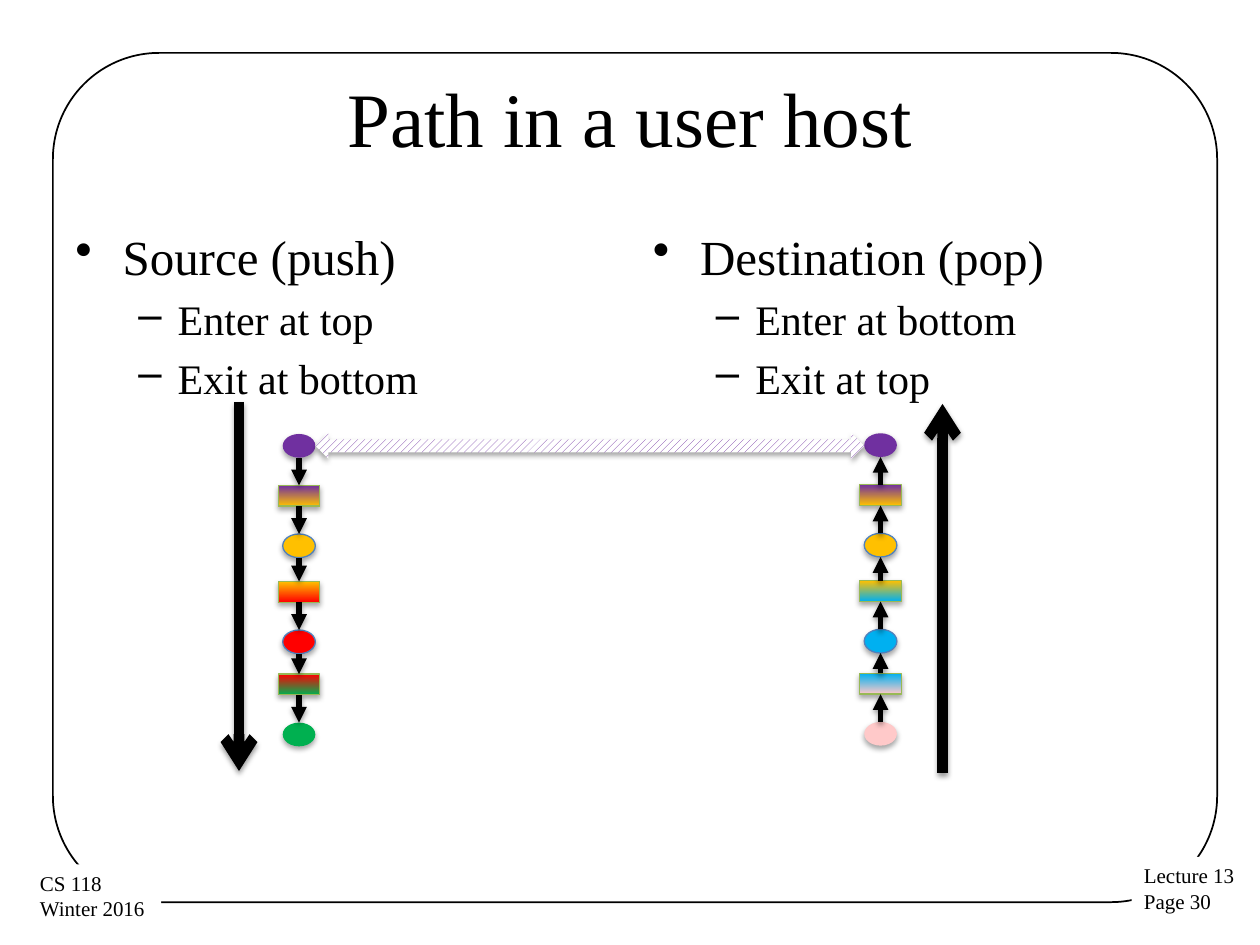
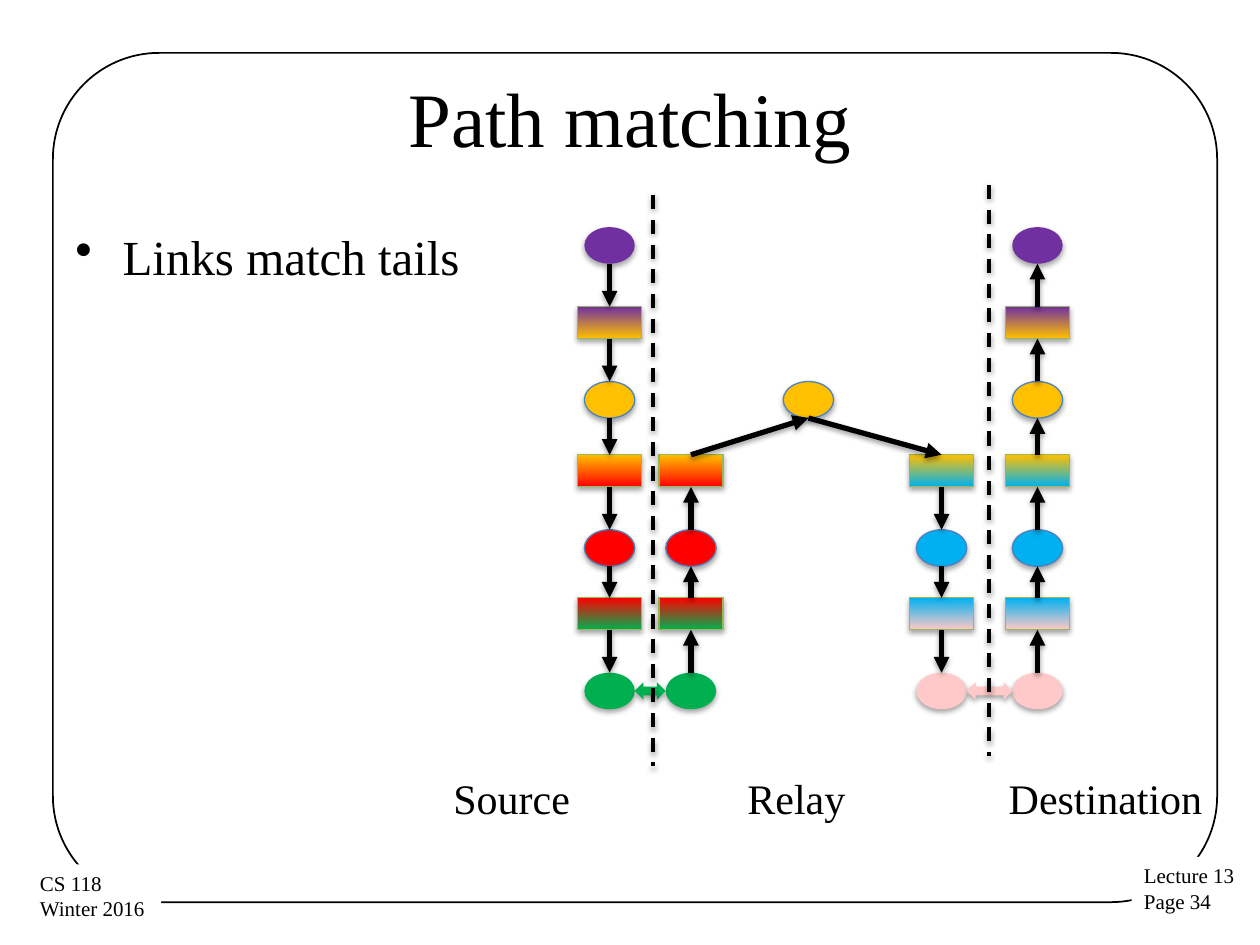
"""Build two lecture slides about protocol paths through hosts and a relay."""
from lxml import etree
from pptx import Presentation
from pptx.dml.color import RGBColor
from pptx.enum.dml import MSO_LINE, MSO_PATTERN
from pptx.enum.shapes import MSO_CONNECTOR, MSO_SHAPE
from pptx.enum.text import MSO_ANCHOR, MSO_AUTO_SIZE, PP_ALIGN
from pptx.oxml.ns import qn
from pptx.util import Pt

STRAIGHT = MSO_CONNECTOR.STRAIGHT
DASH = MSO_LINE.DASH
WIDE_DIAGONAL = MSO_PATTERN.WIDE_UPWARD_DIAGONAL
ELLIPSE = MSO_SHAPE.OVAL
RECTANGLE = MSO_SHAPE.RECTANGLE
ROUNDED = MSO_SHAPE.ROUNDED_RECTANGLE
DOUBLE_ARROW = MSO_SHAPE.LEFT_RIGHT_ARROW
MIDDLE, TOP = MSO_ANCHOR.MIDDLE, MSO_ANCHOR.TOP
CENTER, LEFT = PP_ALIGN.CENTER, PP_ALIGN.LEFT
FIT_SHAPE = MSO_AUTO_SIZE.SHAPE_TO_FIT_TEXT

BLACK = RGBColor(0x00, 0x00, 0x00)
WHITE = RGBColor(0xFF, 0xFF, 0xFF)
PURPLE = RGBColor(0x70, 0x30, 0xA0)
GOLD = RGBColor(0xFF, 0xC0, 0x00)
RED = RGBColor(0xFF, 0x00, 0x00)
GREEN = RGBColor(0x00, 0xB0, 0x50)
BLUE = RGBColor(0x00, 0xB0, 0xF0)
PINK = RGBColor(0xFF, 0xC9, 0xC9)
ELLIPSE_EDGE = RGBColor(0x4F, 0x81, 0xBD)
LINK_EDGE = RGBColor(0x98, 0xB9, 0x55)

FONT = "Times New Roman"
BULLETS = [(28, "•", 27, -27), (24, "–", 58.5, -22.5)]
SOURCE_LAYERS = [PURPLE, GOLD, RED, GREEN]
DESTINATION_LAYERS = [PURPLE, GOLD, BLUE, PINK]

STACK_WIDTH, STACK_HEIGHT = 36.72, 275.5
ELLIPSE_SIZE = (28.8, 20.9)
LINK_SIZE = (STACK_WIDTH, 18.3)
STACK_GAPS = [24.5, 24.5, 21, 24.5, 18, 24.5]


def add_xml(parent, tag, **attributes):
    """Append a drawing element with its attributes and return it."""
    element = etree.SubElement(parent, qn(tag))
    for name, value in attributes.items():
        element.set(name, str(value))
    return element


def add_shadow(shape, opacity, distance):
    """Give a shape a soft shadow straight below it."""
    effects = add_xml(shape._element.spPr, "a:effectLst")
    shadow = add_xml(effects, "a:outerShdw", blurRad=Pt(3.1), dist=Pt(distance),
                     dir=5400000, rotWithShape=0)
    color = add_xml(shadow, "a:srgbClr", val=BLACK)
    add_xml(color, "a:alpha", val=opacity * 1000)


def add_bullet(paragraph, bullet, margin, indent):
    """Set the hanging indent, spacing and bullet of a paragraph."""
    properties = paragraph._p.get_or_add_pPr()
    properties.set("marL", str(Pt(margin)))
    properties.set("indent", str(Pt(indent)))
    add_xml(add_xml(properties, "a:spcBef"), "a:spcPct", val=20000)
    add_xml(properties, "a:buChar", char=bullet)


def add_text(slide, box, lines, size=24, align=LEFT, anchor=TOP, wrap=True,
             bullets=False, fill=None):
    """Add a text box with one paragraph for each line."""
    shape = slide.shapes.add_textbox(*map(Pt, box))
    if fill is not None:
        shape.fill.solid()
        shape.fill.fore_color.rgb = fill
    frame = shape.text_frame
    frame.word_wrap = wrap
    frame.vertical_anchor = anchor
    if not wrap:
        frame.auto_size = FIT_SHAPE
    for index, line in enumerate(lines):
        paragraph = frame.add_paragraph() if index else frame.paragraphs[0]
        paragraph.alignment = align
        if bullets:
            paragraph.level = min(index, 1)
            size, *bullet_format = BULLETS[paragraph.level]
            add_bullet(paragraph, *bullet_format)
        run = paragraph.add_run()
        run.text = line
        run.font.name = FONT
        run.font.size = Pt(size)
        run.font.color.rgb = BLACK


def add_shape(slide, kind, box, colors=(), edge=None, edge_width=0.75, shadow=True,
              hatched=False):
    """Add a shape with a plain, graded or hatched fill."""
    shape = slide.shapes.add_shape(kind, *map(Pt, box))
    fill = shape.fill
    if hatched:
        fill.patterned()
        fill.pattern = WIDE_DIAGONAL
        fill.fore_color.rgb, fill.back_color.rgb = colors
    elif len(colors) == 2:
        fill.gradient()
        fill.gradient_angle = 270
        for stop, color in zip(fill.gradient_stops, colors):
            stop.color.rgb = color
    elif colors:
        fill.solid()
        fill.fore_color.rgb = colors[0]
    else:
        fill.background()
    if edge is None:
        shape.line.fill.background()
    else:
        shape.line.color.rgb = edge
        shape.line.width = Pt(edge_width)
    if shadow:
        add_shadow(shape, 35, 1.8)
    else:
        shape.shadow.inherit = False
    return shape


def add_line(slide, start, end, width=3, head="triangle", dash=None):
    """Draw a black line from start to end, with an optional arrowhead."""
    line = slide.shapes.add_connector(STRAIGHT, *map(Pt, (*start, *end)))
    line.line.color.rgb = BLACK
    line.line.width = Pt(width)
    if dash is not None:
        line.line.dash_style = dash
    if head:
        add_xml(line.line._get_or_add_ln(), "a:tailEnd", type=head)
    add_shadow(line, 38, 1.6)


def top_of(box):
    """Return the middle of the top edge of a box."""
    left, top, width, _ = box
    return left + width / 2, top


def bottom_of(box):
    """Return the middle of the bottom edge of a box."""
    left, top, width, height = box
    return left + width / 2, top + height


def draw_stack(slide, box, layers, upward=False, first=0):
    """Draw the layers and links of a stack from part first on; return all part boxes."""
    left, top, width, height = box
    scale = height / STACK_HEIGHT
    parts = []
    for index, gap in enumerate(STACK_GAPS + [0]):
        part_width, part_height = (
            size * scale for size in (LINK_SIZE if index % 2 else ELLIPSE_SIZE))
        parts.append((left + (width - part_width) / 2, top, part_width, part_height))
        top += part_height + gap * scale
    for index in range(first, len(parts)):
        layer = index // 2
        if index % 2:
            add_shape(slide, RECTANGLE, parts[index], layers[layer:layer + 2], LINK_EDGE)
        else:
            edge = ELLIPSE_EDGE if 0 < layer < len(layers) - 1 else None
            add_shape(slide, ELLIPSE, parts[index], [layers[layer]], edge)
    for upper, lower in zip(parts[first:], parts[first + 1:]):
        ends = [bottom_of(upper), top_of(lower)]
        add_line(slide, *(reversed(ends) if upward else ends))
    return parts


def draw_match(slide, left_part, right_part, height, colors, hatched=False):
    """Join two parts of equal height with a double arrow."""
    left = left_part[0] + left_part[2]
    top = left_part[1] + (left_part[3] - height) / 2
    box = (left, top, right_part[0] - left, height)
    add_shape(slide, DOUBLE_ARROW, box, colors, hatched=hatched)


def add_lecture_slide(presentation, title, page):
    """Add a slide with the frame, footers and title."""
    slide = presentation.slides.add_slide(presentation.slide_layouts[6])
    frame = add_shape(slide, ROUNDED, (30.24, 30.24, 665.28, 485.28), edge=BLACK,
                      edge_width=1, shadow=False)
    frame.adjustments[0] = 0.125
    footers = [((646.6, 489.6, 67, 36.7), ["Lecture 13", f"Page {page}"]),
               ((15.8, 493.9, 76.3, 36.7), ["CS 118", "Winter 2016"])]
    for box, lines in footers:
        add_text(slide, box, lines, size=12, wrap=False, fill=WHITE)
    add_text(slide, (36, 21.6, 648, 90), [title], size=44, align=CENTER, anchor=MIDDLE)
    return slide


def add_user_host_slide(presentation):
    """Show the source and destination stacks side by side."""
    slide = add_lecture_slide(presentation, "Path in a user host", 30)
    columns = [(36, ["Source (push)", "Enter at top", "Exit at bottom"]),
               (366, ["Destination (pop)", "Enter at bottom", "Exit at top"])]
    for left, lines in columns:
        add_text(slide, (left, 126, 318, 356.4), lines, bullets=True)
    source = draw_stack(slide, (159, 248, 23.8, 178.5), SOURCE_LAYERS)
    destination = draw_stack(slide, (491.3, 247.6, 23.8, 178.5), DESTINATION_LAYERS,
                             upward=True)
    draw_match(slide, source[0], destination[0], 15, [PURPLE, WHITE], hatched=True)
    add_line(slide, (136.6, 229.7), (136.6, 440.6), width=6, head="arrow")
    add_line(slide, (538.6, 441.6), (538.6, 230.8), width=6, head="arrow")


def add_matching_slide(presentation):
    """Show the path from the source through the relay to the destination."""
    slide = add_lecture_slide(presentation, "Path matching", 34)
    add_text(slide, (36, 126, 318, 356.4), ["Links match tails"], bullets=True)
    stacks = [(330, SOURCE_LAYERS, False, 0), (376.5, SOURCE_LAYERS, True, 3),
              (519.7, DESTINATION_LAYERS, False, 3), (574.5, DESTINATION_LAYERS, True, 0)]
    source, relay_in, relay_out, destination = [
        draw_stack(slide, (left, 129.8, STACK_WIDTH, STACK_HEIGHT), layers, upward, first)
        for left, layers, upward, first in stacks]
    relay = (447.6, source[2][1], *ELLIPSE_SIZE)
    add_shape(slide, ELLIPSE, relay, [GOLD], ELLIPSE_EDGE)
    add_line(slide, top_of(relay_in[3]), bottom_of(relay))
    add_line(slide, bottom_of(relay), top_of(relay_out[3]))
    draw_match(slide, source[-1], relay_in[-1], 10, [GREEN])
    draw_match(slide, relay_out[-1], destination[-1], 10, [PINK])
    for left, width, name in [(252, 82, "Source"), (569.3, 126.5, "Destination"),
                              (420, 71, "Relay")]:
        add_text(slide, (left, 438, width, 36), [name], wrap=False)
    for x, top in [(373.2, 111.6), (565.2, 105.7)]:
        add_line(slide, (x, top), (x, top + 326.2), width=2, head=None, dash=DASH)


def main():
    """Build and save the presentation."""
    presentation = Presentation()
    presentation.slide_width = Pt(720)
    presentation.slide_height = Pt(540)
    add_user_host_slide(presentation)
    add_matching_slide(presentation)
    presentation.save("out.pptx")


if __name__ == "__main__":
    main()
